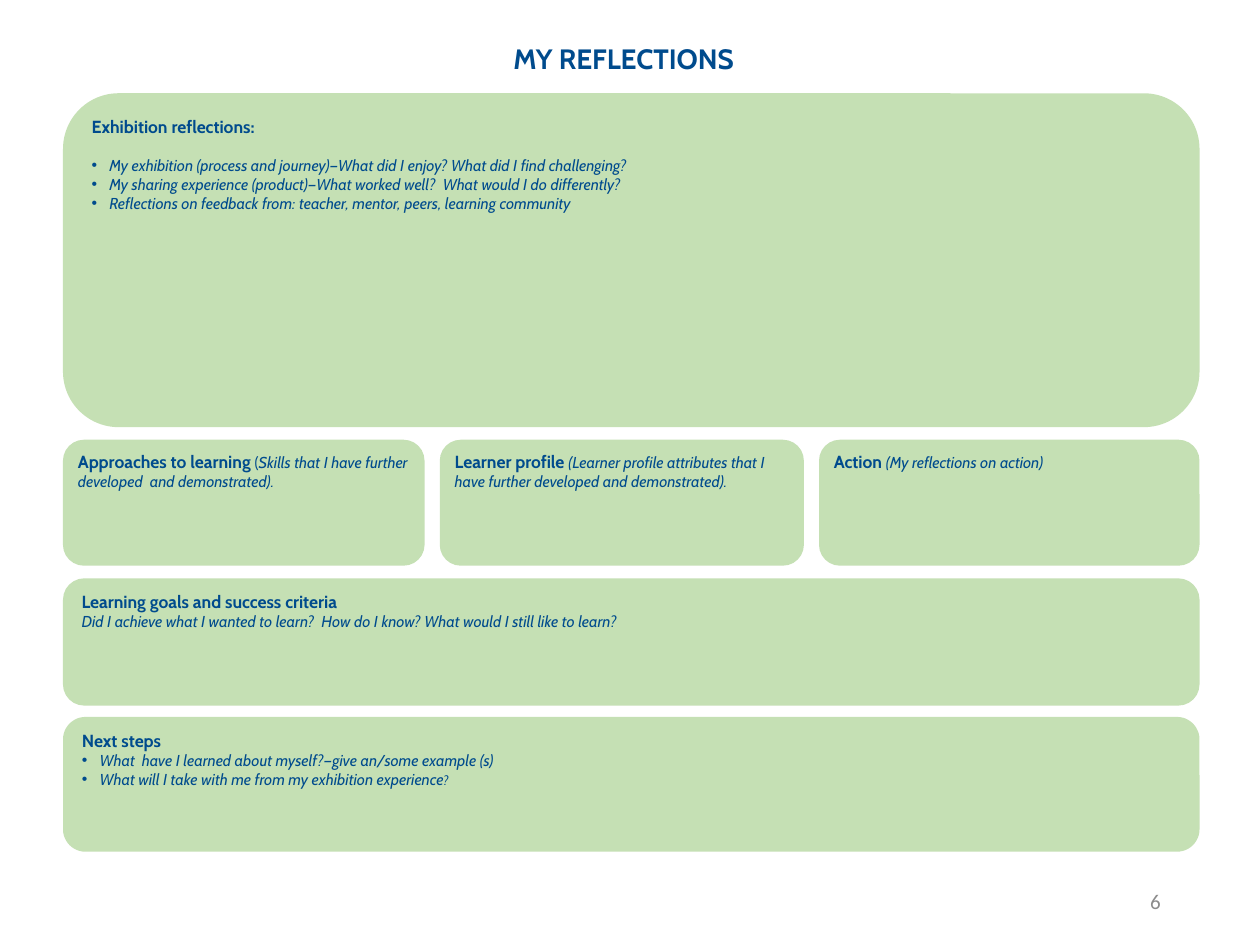
from lxml.etree import SubElement
from pptx import Presentation
from pptx.dml.color import RGBColor
from pptx.enum.shapes import MSO_SHAPE as Shape
from pptx.enum.text import MSO_ANCHOR as Anchor, PP_ALIGN as Align
from pptx.oxml.ns import qn
from pptx.util import Inches, Pt

NAVY, GREEN, GREY = "004B8D", "C5E0B4", "8C8C8C"
LEFT, WIDTH = 0.5, 9.02
MIDDLE_TOP, MIDDLE_HEIGHT = 3.49, 1
HEADING = {"size": 10, "bold": True}
PROMPT = {"size": 9, "italic": True}
PLAIN = {"size": 9}
SMALL = {"size": 7.5, "italic": True}


def colour(code):
    """Turn a hex string into a colour."""
    return RGBColor.from_string(code)


def style(font, size, bold=False, italic=False, name="Cabin", code=NAVY):
    """Set the look of a run or paragraph font."""
    font.name, font.size = name, Pt(size)
    font.bold, font.italic = bold, italic
    font.color.rgb = colour(code)


def add_label(page, text, place, align, **look):
    """Add a line of free text."""
    box = page.shapes.add_textbox(*map(Inches, place))
    frame = box.text_frame
    frame.word_wrap = True
    frame.vertical_anchor = Anchor.MIDDLE
    para = frame.paragraphs[0]
    para.text, para.alignment = text, align
    style(para.font, **look)


def add_panel(page, place, tight=False):
    """Add a rounded green panel and return its text frame."""
    panel = page.shapes.add_shape(Shape.ROUNDED_RECTANGLE, *map(Inches, place))
    panel.shadow.inherit = False
    panel.fill.solid()
    panel.fill.fore_color.rgb = colour(GREEN)
    panel.line.fill.background()
    frame = panel.text_frame
    frame.word_wrap = True
    frame.vertical_anchor = Anchor.TOP
    if tight:
        frame.margin_left = frame.margin_right = Inches(0.07)
        frame.margin_top = frame.margin_bottom = Inches(0.04)
    return frame


def add_line(frame, *pieces, bullet=False, gap=0):
    """Write (text, look) pieces as the next paragraph of a frame."""
    first = frame.paragraphs[0]
    para = frame.add_paragraph() if first.runs else first
    para.alignment = Align.LEFT
    para.space_after = Pt(gap)
    if bullet:
        props = para._p.get_or_add_pPr()
        props.set("marL", str(Inches(0.14)))
        props.set("indent", str(-Inches(0.14)))
        SubElement(props, qn("a:buFont"), typeface="Arial")
        SubElement(props, qn("a:buChar"), char="•")
    for text, look in pieces:
        span = para.add_run()
        span.text = text
        style(span.font, **look)


def add_exhibition(page):
    """Add the large panel of exhibition reflections."""
    frame = add_panel(page, (LEFT, 0.74, WIDTH, 2.65))
    add_line(frame, ("Exhibition reflections:", HEADING), gap=11)
    for text in (
        "My exhibition (process and journey)—What did I enjoy? What did I find challenging?",
        "My sharing experience (product)—What worked well?  What would I do differently?",
        "Reflections on feedback from: teacher, mentor, peers, learning community",
    ):
        add_line(frame, (text, PROMPT), bullet=True)


def add_middle_row(page):
    """Add the three panels side by side."""
    columns = (
        (0.5, 2.87, ("Approaches to learning ", HEADING), ("(", PLAIN),
         ("Skills that I have further developed  and demonstrated).", PROMPT)),
        (3.49, 2.89, ("Learner profile ", HEADING),
         ("(Learner profile attributes that I have further developed and demonstrated).", PROMPT)),
        (6.5, 3.02, ("Action ", HEADING), ("(My reflections on action)", PROMPT)),
    )
    for left, width, *pieces in columns:
        frame = add_panel(page, (left, MIDDLE_TOP, width, MIDDLE_HEIGHT), tight=True)
        add_line(frame, *pieces)


def add_goals_and_steps(page):
    """Add the two wide panels at the bottom."""
    goals = add_panel(page, (LEFT, 4.59, WIDTH, 1.01))
    add_line(goals, ("Learning goals and success criteria", HEADING))
    add_line(goals, ("Did I achieve what I wanted to learn?  How do I know? "
                     "What would I still like to learn?", PROMPT))
    steps = add_panel(page, (LEFT, 5.69, WIDTH, 1.07))
    add_line(steps, ("Next steps", HEADING))
    add_line(steps, ("What  have I learned about myself?—give an/some example (s)", PROMPT),
             bullet=True)
    add_line(steps, ("What will I take with me from my exhibition experience", PROMPT),
             ("?", SMALL), bullet=True)


def main():
    """Build the reflections slide."""
    deck = Presentation()
    deck.slide_width, deck.slide_height = Inches(10), Inches(7.5)
    page = deck.slides.add_slide(deck.slide_layouts[6])
    add_label(page, "6", (7.06, 6.95, 2.25, 0.4), Align.RIGHT,
              size=12, name="Calibri", code=GREY)
    add_label(page, "MY REFLECTIONS", (0, 0.28, 9.9, 0.37), Align.CENTER, size=16, bold=True)
    add_exhibition(page)
    add_middle_row(page)
    add_goals_and_steps(page)
    deck.save("out.pptx")


if __name__ == "__main__":
    main()
